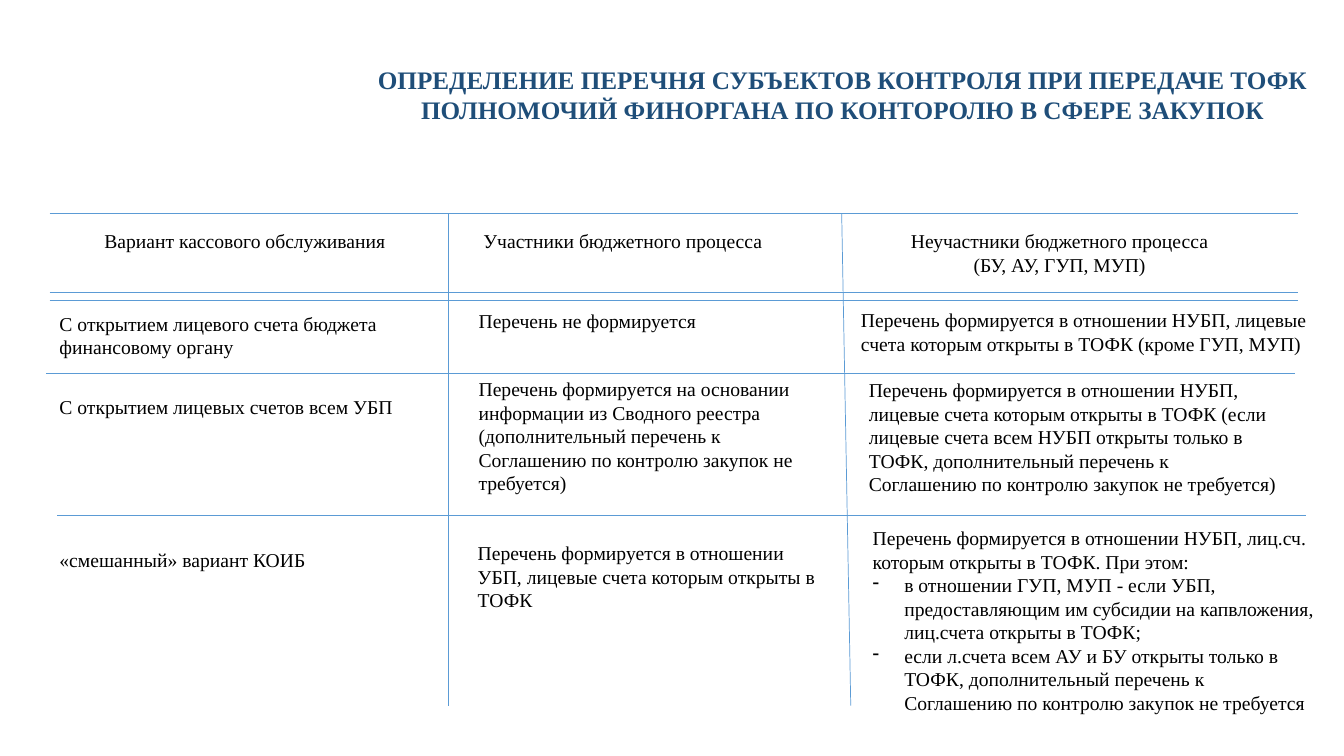
import lxml.etree
import pptx
import pptx.dml.color
import pptx.enum.shapes
import pptx.enum.text
import pptx.oxml.ns
import pptx.util

Pt = pptx.util.Pt
ALIGN = pptx.enum.text.PP_ALIGN
COLORS = {"title": "1F4E79", "body": "000000", "rule": "5B9BD5"}
TITLE = {"size": Pt(18), "bold": True}
BODY = {"size": Pt(14), "bold": False}
BULLET_INDENT = Pt(22.5)

HEADINGS = [
    (64.8, 160, 220.3, ["Вариант кассового обслуживания"]),
    (334.8, 160, 220.3, ["Участники бюджетного процесса"]),
    (628.4, 160, 257, ["Неучастники бюджетного процесса", "(БУ, АУ, ГУП, МУП)"]),
]
CELLS = [
    (35.4, 219, 274.3, ["С открытием лицевого счета бюджета финансовому органу"]),
    (334.8, 217, 188.6, ["Перечень не формируется"]),
    (607.9, 216.7, 332.6, [
        "Перечень формируется в отношении НУБП, лицевые счета которым открыты в ТОФК (кроме ГУП, МУП)"]),
    (35.4, 278.8, 263.5, ["С открытием лицевых счетов всем УБП"]),
    (334.8, 265.7, 254.2, [
        "Перечень формируется на основании информации из Сводного реестра "
        "(дополнительный перечень к Соглашению по контролю закупок не требуется)"]),
    (613.5, 266.4, 305.3, [
        "Перечень формируется в отношении НУБП, лицевые счета которым открыты в ТОФК "
        "(если лицевые счета всем НУБП открыты только в ТОФК, дополнительный перечень "
        "к Соглашению по контролю закупок не требуется)"]),
    (35.4, 388.1, 201.6, ["«смешанный» вариант КОИБ"]),
    (334.1, 383, 267.1, [
        "Перечень формируется в отношении УБП, лицевые счета которым открыты в ТОФК"]),
]
MIXED_INTRO = "Перечень формируется в отношении НУБП, лиц.сч. которым открыты в ТОФК. При этом:"
MIXED_BULLETS = [
    "в отношении ГУП, МУП - если УБП, предоставляющим им субсидии на капвложения, лиц.счета открыты в ТОФК;",
    "если л.счета всем АУ и БУ открыты только в ТОФК, дополнительный перечень "
    "к Соглашению по контролю закупок не требуется",
]
ROW_RULES = [(35.4, 152.2), (35.4, 209), (35.4, 214.9), (33, 266.4), (41, 368)]
RULE_LENGTH = 891.8
COLUMN_RULES = [(320.4, 320.4), (601.2, 607.7)]
TABLE_TOP, TABLE_BOTTOM = 152.2, 504


class SlideBuilder:
    font_name = "Times New Roman"

    def __init__(self, slide):
        self.slide = slide

    def rule(self, x1, y1, x2, y2):
        connector = self.slide.shapes.add_connector(
            pptx.enum.shapes.MSO_CONNECTOR.STRAIGHT, Pt(x1), Pt(y1), Pt(x2), Pt(y2))
        connector.line.width = Pt(0.5)
        connector.line.color.rgb = pptx.dml.color.RGBColor.from_string(COLORS["rule"])
        lxml.etree.SubElement(
            connector._element.spPr, pptx.oxml.ns.qn("a:effectLst"))

    def bullet(self, paragraph):
        properties = paragraph._p.get_or_add_pPr()
        properties.set("marL", str(BULLET_INDENT))
        properties.set("indent", str(-BULLET_INDENT))
        mark = lxml.etree.SubElement(properties, pptx.oxml.ns.qn("a:buChar"))
        mark.set("char", "-")

    def text(self, left, top, width, lines, height=24.5, style=BODY,
             color="body", align=ALIGN.LEFT, bullets=()):
        shape = self.slide.shapes.add_textbox(Pt(left), Pt(top), Pt(width), Pt(height))
        frame = shape.text_frame
        frame.word_wrap = True
        frame.auto_size = pptx.enum.text.MSO_AUTO_SIZE.SHAPE_TO_FIT_TEXT
        for index, line in enumerate([*lines, *bullets]):
            paragraph = frame.add_paragraph() if index else frame.paragraphs[0]
            paragraph.text = line
            paragraph.alignment = align
            if index >= len(lines):
                self.bullet(paragraph)
            font = paragraph.runs[0].font
            for name, value in {"name": self.font_name, **style}.items():
                setattr(font, name, value)
            font.color.rgb = pptx.dml.color.RGBColor.from_string(COLORS[color])


def main():
    presentation = pptx.Presentation()
    presentation.slide_width = Pt(960)
    presentation.slide_height = Pt(540)
    slide = presentation.slides.add_slide(presentation.slide_layouts[6])
    builder = SlideBuilder(slide)

    builder.text(262.8, 42.5, 678.2, [
        "ОПРЕДЕЛЕНИЕ ПЕРЕЧНЯ СУБЪЕКТОВ КОНТРОЛЯ ПРИ ПЕРЕДАЧЕ "
        "ТОФК ПОЛНОМОЧИЙ ФИНОРГАНА ПО КОНТОРОЛЮ В СФЕРЕ ЗАКУПОК"],
        height=51, style=TITLE, color="title", align=ALIGN.CENTER)
    for left, top in ROW_RULES:
        builder.rule(left, top, left + RULE_LENGTH, top)
    for top_x, bottom_x in COLUMN_RULES:
        builder.rule(top_x, TABLE_TOP, bottom_x, TABLE_BOTTOM)
    for left, top, width, lines in HEADINGS:
        builder.text(left, top, width, lines, height=7.4 + 17 * len(lines), align=ALIGN.CENTER)
    for left, top, width, lines in CELLS:
        rows = -(-len(lines[0]) // int(width / 6.7))
        builder.text(left, top, width, lines, height=7.4 + 17 * rows)
    builder.text(616.3, 372.2, 329.8, [MIXED_INTRO], height=143.3, bullets=MIXED_BULLETS)

    presentation.save("out.pptx")


if __name__ == "__main__":
    main()
